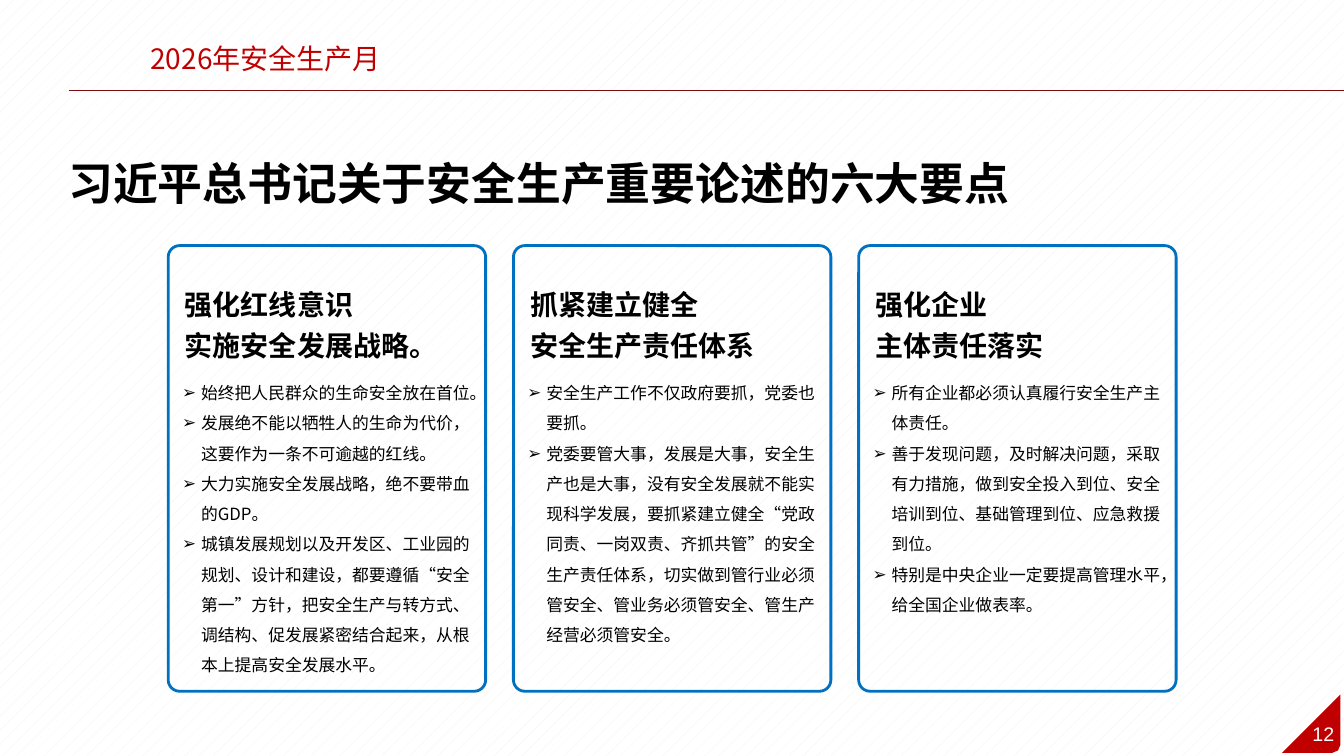
from lxml import etree
from pptx import Presentation
from pptx.dml.color import RGBColor
from pptx.enum.dml import MSO_PATTERN
from pptx.enum.shapes import MSO_CONNECTOR, MSO_SHAPE
from pptx.enum.text import PP_ALIGN
from pptx.oxml.ns import qn
from pptx.util import Cm, Pt

CJK = "Noto Sans CJK SC"
RED = "C00000"


def color(hex_string):
    return RGBColor.from_string(hex_string)


def add_text(lines, left, top, width, height, size, font=CJK, ink="000000",
             bold=False, align=None, spacing=None, wrap=True, bullet=None):
    frame = slide.shapes.add_textbox(Cm(left), Cm(top), Cm(width), Cm(height)).text_frame
    frame.word_wrap = wrap
    for i, line in enumerate(lines):
        paragraph = frame.paragraphs[0] if i == 0 else frame.add_paragraph()
        paragraph.alignment = align
        paragraph.line_spacing = spacing
        if bullet:
            props = paragraph._p.get_or_add_pPr()
            props.set("marL", str(Cm(0.48)))
            props.set("indent", str(-Cm(0.48)))
            etree.SubElement(props, qn("a:buFont")).set("typeface", "Arial")
            etree.SubElement(props, qn("a:buChar")).set("char", bullet)
        run = paragraph.add_run()
        run.text = line
        run.font.size = Pt(size)
        run.font.bold = bold
        run.font.name = font
        run.font.color.rgb = color(ink)
        etree.SubElement(run._r.get_or_add_rPr(), qn("a:ea")).set("typeface", CJK)


deck = Presentation()
deck.slide_width, deck.slide_height = Cm(33.87), Cm(19.05)
slide = deck.slides.add_slide(deck.slide_layouts[6])

# Background pattern
backdrop = slide.background.fill
backdrop.patterned()
backdrop.pattern = MSO_PATTERN.PERCENT_5
backdrop.fore_color.rgb = color("F2F2F2")
backdrop.back_color.rgb = color("FFFFFF")

# Header
header_rule = slide.shapes.add_connector(
    MSO_CONNECTOR.STRAIGHT, Cm(1.73), Cm(2.27), Cm(33.87), Cm(2.27))
header_rule.line.color.rgb = color("7C0D10")
header_rule.line.width = Pt(0.75)
etree.SubElement(header_rule._element.spPr, qn("a:effectLst"))
add_text(["2026年安全生产月"], 2.34, 0.91, 8.71, 1.11, 20, ink=RED, align=PP_ALIGN.CENTER)

# Page number corner
corner_points = [(33.78, 18.77), (33.72, 18.91), (33.58, 18.97), (32.31, 18.97)]
builder = slide.shapes.build_freeform(Cm(33.78), Cm(17.5), scale=1.0)
builder.add_line_segments([(Cm(x), Cm(y)) for x, y in corner_points], close=True)
corner = builder.convert_to_shape()
corner.shadow.inherit = False
corner.fill.solid()
corner.fill.fore_color.rgb = color(RED)
corner.line.fill.background()
add_text(["12"], 32.79, 18.06, 1.12, 0.86, 14, font="Arial", ink="FFFFFF",
         align=PP_ALIGN.CENTER, wrap=False)

# Title
add_text(["习近平总书记关于安全生产重要论述的六大要点"], 1.47, 3.81, 30.94, 1.62, 32,
         font="Calibri", bold=True)

# Three cards: heading lines, then points
cards = [
    (["强化红线意识", "实施安全发展战略。"],
     ["始终把人民群众的生命安全放在首位。",
      "发展绝不能以牺牲人的生命为代价，这要作为一条不可逾越的红线。",
      "大力实施安全发展战略，绝不要带血的GDP。",
      "城镇发展规划以及开发区、工业园的规划、设计和建设，都要遵循“安全第一”方针，"
      "把安全生产与转方式、调结构、促发展紧密结合起来，从根本上提高安全发展水平。"]),
    (["抓紧建立健全", "安全生产责任体系"],
     ["安全生产工作不仅政府要抓，党委也要抓。",
      "党委要管大事，发展是大事，安全生产也是大事，没有安全发展就不能实现科学发展，"
      "要抓紧建立健全“党政同责、一岗双责、齐抓共管”的安全生产责任体系，"
      "切实做到管行业必须管安全、管业务必须管安全、管生产经营必须管安全。"]),
    (["强化企业", "主体责任落实"],
     ["所有企业都必须认真履行安全生产主体责任。",
      "善于发现问题，及时解决问题，采取有力措施，做到安全投入到位、安全培训到位、"
      "基础管理到位、应急救援到位。",
      "特别是中央企业一定要提高管理水平，给全国企业做表率。"]),
]
for column, (heading, points) in enumerate(cards):
    left = 4.24 + 8.7 * column
    card = slide.shapes.add_shape(
        MSO_SHAPE.ROUNDED_RECTANGLE, Cm(left), Cm(6.19), Cm(8), Cm(11.23))
    card.adjustments[0] = 0.036
    card.shadow.inherit = False
    card.fill.background()
    card.line.color.rgb = color("0070C0")
    card.line.width = Pt(2)
    add_text(heading, left + 0.17, 6.96, 6.93, 2.3, 20, bold=True, spacing=1.2, wrap=False)
    add_text(points, left + 0.1, 9.27, 8.08, 7.87, 12, spacing=1.5, bullet="➢")

deck.save("out.pptx")
